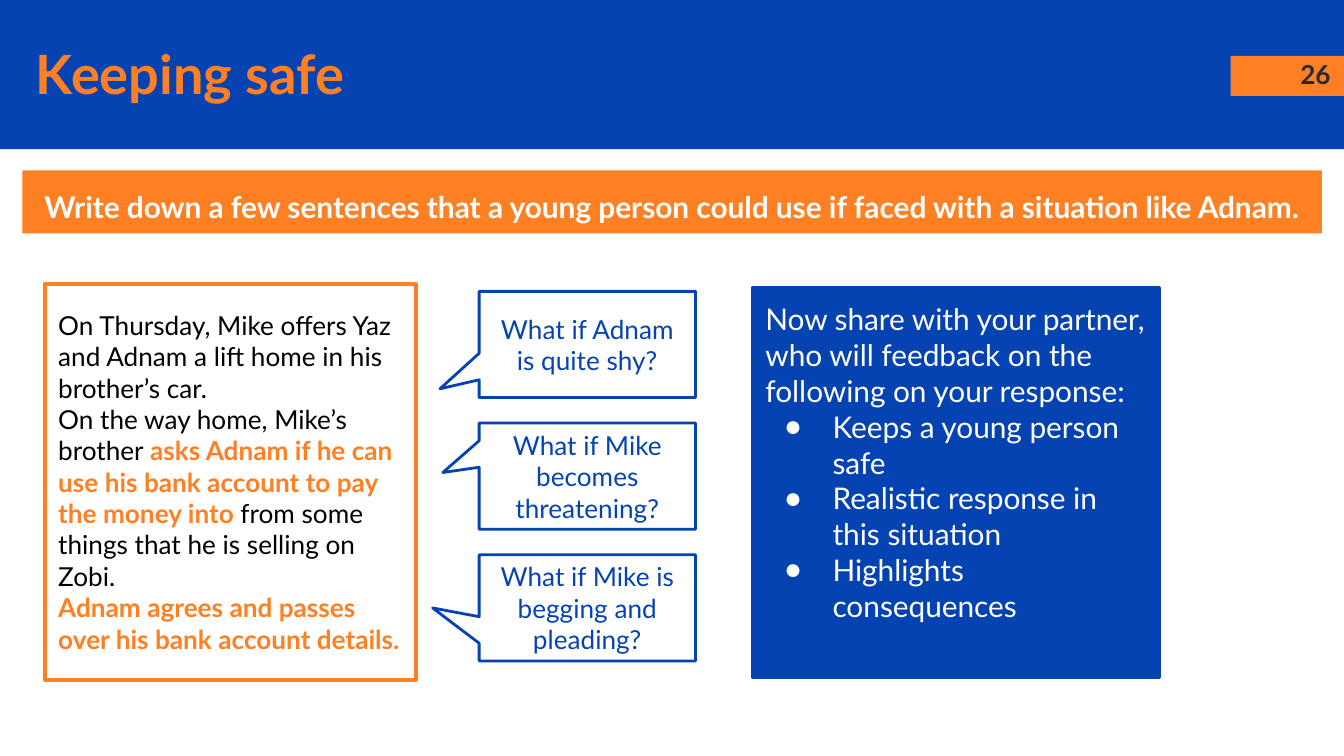
from lxml.etree import SubElement
from pptx import Presentation
from pptx.dml.color import RGBColor
from pptx.enum.shapes import MSO_SHAPE
from pptx.enum.text import MSO_ANCHOR, MSO_AUTO_SIZE, PP_ALIGN
from pptx.oxml.ns import qn
from pptx.util import Inches, Pt

WIDTH = Inches(10)
HEIGHT = WIDTH * 9 // 16
BLUE, ORANGE, WHITE, BLACK, DARK = "0543B3", "FF8022", "FFFFFF", "000000", "262A33"


def color(value):
    return RGBColor.from_string(value)


def area(left, top, width, height):
    return (
        round(WIDTH * left / 100),
        round(HEIGHT * top / 100),
        round(WIDTH * width / 100),
        round(HEIGHT * height / 100),
    )


def paint(part, fill=None, line=None, weight=1.5):
    if fill:
        part.fill.solid()
        part.fill.fore_color.rgb = color(fill)
    else:
        part.fill.background()
    if line:
        part.line.color.rgb = color(line)
        part.line.width = Pt(weight)
    else:
        part.line.fill.background()


def prepare(part, anchor=MSO_ANCHOR.TOP, inset=0.1):
    frame = part.text_frame
    frame.word_wrap = True
    frame.auto_size = MSO_AUTO_SIZE.NONE
    frame.vertical_anchor = anchor
    frame.margin_left = frame.margin_right = Inches(0.1)
    frame.margin_top = frame.margin_bottom = Inches(inset)
    return frame


def place(placeholder, bounds, **format):
    placeholder.left, placeholder.top, placeholder.width, placeholder.height = bounds
    return prepare(placeholder, **format)


def add_panel(slide, bounds, kind=MSO_SHAPE.RECTANGLE, **format):
    panel = slide.shapes.add_shape(kind, *bounds)
    panel.shadow.inherit = False
    paint(panel, **format)
    return panel


def set_bullet(paragraph, bullet):
    properties = paragraph._p.get_or_add_pPr()
    properties.set("marL", str(Inches(0.5) if bullet else 0))
    properties.set("indent", str(Inches(-0.36) if bullet else 0))
    if bullet:
        bullet_color = SubElement(properties, qn("a:buClr"))
        SubElement(bullet_color, qn("a:srgbClr")).set("val", WHITE)
        SubElement(properties, qn("a:buChar")).set("char", bullet)
    else:
        SubElement(properties, qn("a:buNone"))


def add_paragraph(frame, align=PP_ALIGN.LEFT, spacing=1.0, bullet=None):
    first = frame.paragraphs[0]
    paragraph = frame.add_paragraph() if first.runs else first
    set_bullet(paragraph, bullet)
    paragraph.alignment = align
    paragraph.line_spacing = spacing
    paragraph.space_before = Pt(0)
    return paragraph


def write(paragraph, text, size=14, ink=BLACK, bold=False):
    run = paragraph.add_run()
    run.text = text
    run.font.name = "Lato"
    run.font.size = Pt(size)
    run.font.bold = bold
    run.font.color.rgb = color(ink)


def add_header(slide, title):
    add_panel(slide, area(0, 0, 100, 19.73), fill=BLUE)
    add_panel(slide, area(91.57, 7.4, 8.43, 5.3), fill=ORANGE)
    number = slide.shapes.add_textbox(*area(94, 5.9, 6, 7.65))
    write(add_paragraph(prepare(number), align=PP_ALIGN.RIGHT), "26", ink=DARK, bold=True)
    heading = place(title, area(1.67, 3.56, 89.8, 12.27))
    write(add_paragraph(heading), "Keeping safe", size=29, ink=ORANGE, bold=True)
    title.element.getparent().append(title.element)


def add_task(slide):
    banner = add_panel(slide, area(1.67, 22.54, 96.7, 8.36), fill=ORANGE)
    paragraph = add_paragraph(prepare(banner), align=PP_ALIGN.CENTER, spacing=1.15)
    task = "Write down a few sentences that a young person could use if faced with a situation like Adnam."
    write(paragraph, task, size=16, ink=WHITE, bold=True)


def fill_scenario(body):
    frame = place(body, area(3.33, 37.55, 27.6, 52.35), anchor=MSO_ANCHOR.MIDDLE, inset=0.05)
    paint(body, line=ORANGE, weight=2.25)
    story = [
        [("On Thursday, Mike offers Yaz and Adnam a lift home in his brother’s car.", False)],
        [
            ("On the way home, Mike’s brother ", False),
            ("asks Adnam if he can use his bank account to pay the money into ", True),
            ("from some things that he is selling on Zobi.", False),
        ],
        [("Adnam agrees and passes over his bank account details.", True)],
    ]
    for passages in story:
        paragraph = add_paragraph(frame)
        for text, key in passages:
            write(paragraph, text, ink=ORANGE if key else BLACK, bold=key)


def add_questions(slide):
    questions = [
        ("What if Adnam is quite shy?", -0.681, 0.418),
        ("What if Mike becomes threatening?", -0.668, -0.034),
        ("What if Mike is begging and pleading?", -0.715, 0.001),
    ]
    for row, (question, tip_x, tip_y) in enumerate(questions):
        bounds = area(35.65, 38.55 + 17.42 * row, 16.1, 14.04)
        callout = add_panel(slide, bounds, MSO_SHAPE.ROUNDED_RECTANGULAR_CALLOUT, line=BLUE)
        for index, value in enumerate((tip_x, tip_y, 0)):
            callout.adjustments[index] = value
        frame = prepare(callout, anchor=MSO_ANCHOR.MIDDLE)
        write(add_paragraph(frame, align=PP_ALIGN.CENTER), question, ink=BLUE)


def fill_feedback(body):
    frame = place(body, area(55.95, 38.04, 30.3, 51.56))
    paint(body, fill=BLUE, line=BLUE)
    intro = "Now share with your partner, who will feedback on the following on your response:"
    write(add_paragraph(frame), intro, size=16, ink=WHITE)
    for criterion in (
        "Keeps a young person safe",
        "Realistic response in this situation",
        "Highlights consequences",
    ):
        write(add_paragraph(frame, bullet="●"), criterion, size=16, ink=WHITE)


def main():
    deck = Presentation()
    deck.slide_width, deck.slide_height = WIDTH, HEIGHT
    slide = deck.slides.add_slide(deck.slide_layouts[3])
    title, scenario, feedback = slide.placeholders
    add_header(slide, title)
    add_task(slide)
    fill_scenario(scenario)
    add_questions(slide)
    fill_feedback(feedback)
    deck.save("out.pptx")


if __name__ == "__main__":
    main()
